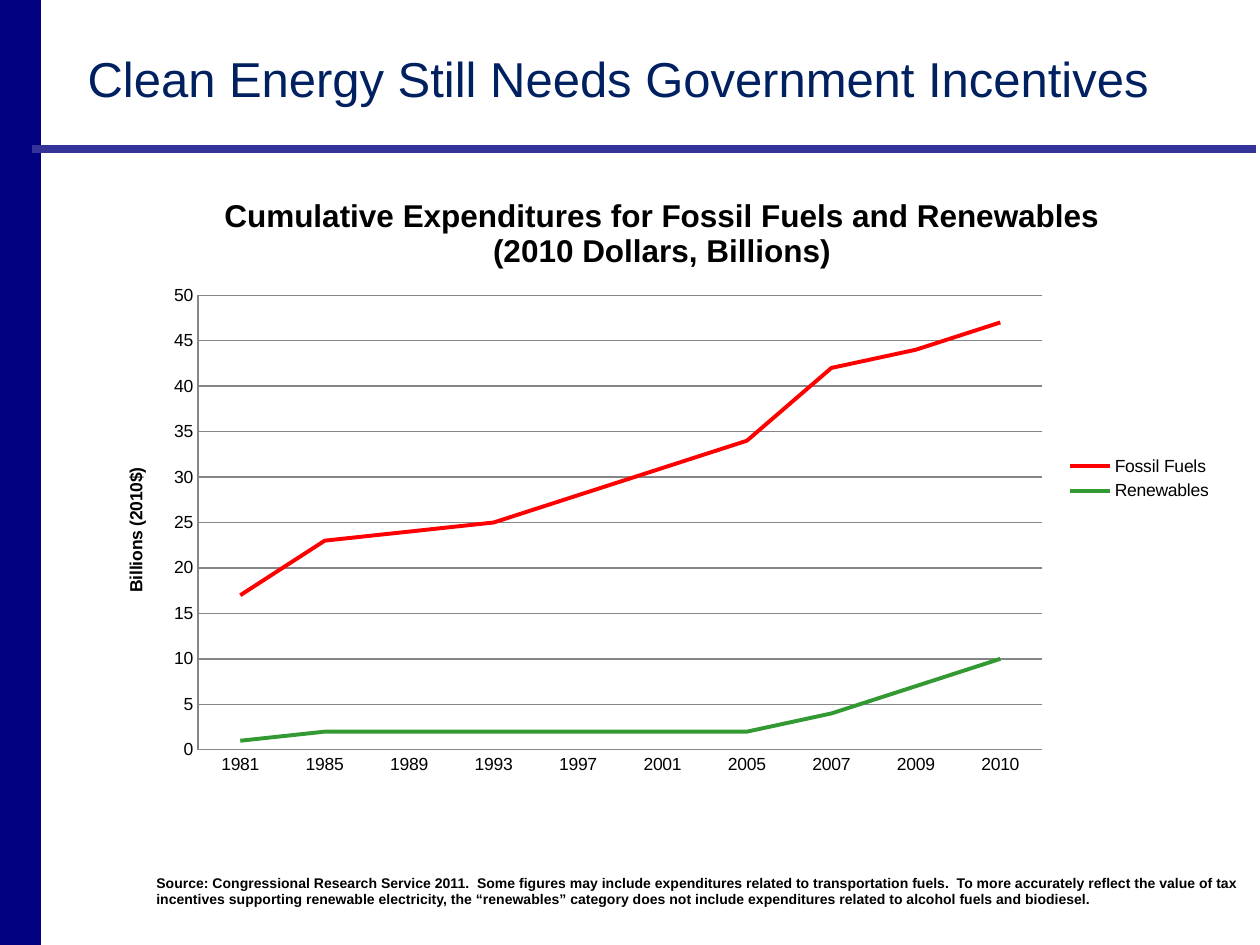
"""Builds a slide with a line chart of fossil fuel and renewable energy expenditures."""
from dataclasses import dataclass

from lxml import etree
from pptx import Presentation
from pptx import util as u
from pptx.chart.data import CategoryChartData
from pptx.dml.color import RGBColor
from pptx.enum import chart as ch
from pptx.enum import shapes, text
from pptx.oxml import parse_xml
from pptx.oxml.ns import nsdecls, qn

PX = u.Inches(1) / 126
NAVY = RGBColor(0x00, 0x00, 0x80)
INDIGO = RGBColor(0x33, 0x33, 0x99)
TITLE_BLUE = RGBColor(0x00, 0x20, 0x60)
BLACK = RGBColor(0x00, 0x00, 0x00)
GREY = RGBColor(0x86, 0x86, 0x86)
RED = RGBColor(0xFF, 0x00, 0x00)
GREEN = RGBColor(0x33, 0x99, 0x33)

TITLE = "Clean Energy Still Needs Government Incentives"
CHART_TITLE = "Cumulative Expenditures for Fossil Fuels and Renewables (2010 Dollars, Billions)"
SOURCE = (
    "Source: Congressional Research Service 2011.  Some figures may include expenditures "
    "related to transportation fuels.  To more accurately reflect the value of tax "
    "incentives supporting renewable electricity, the “renewables” category does not "
    "include expenditures related to alcohol fuels and biodiesel."
)
YEARS = ["1981", "1985", "1989", "1993", "1997", "2001", "2005", "2007", "2009", "2010"]


@dataclass(frozen=True)
class Box:
    left: int
    top: int
    width: int
    height: int

    def emu(self) -> tuple[int, ...]:
        return tuple(px(n) for n in (self.left, self.top, self.width, self.height))


@dataclass(frozen=True)
class Series:
    name: str
    values: tuple[int, ...]
    color: RGBColor


CHART_BOX = Box(99, 170, 1126, 617)
PLOT_BOX = Box(198, 295, 845, 455)
SERIES = (
    Series("Fossil Fuels", (17, 23, 24, 25, 28, 31, 34, 42, 44, 47), RED),
    Series("Renewables", (1, 2, 2, 2, 2, 2, 2, 4, 7, 10), GREEN),
)


def px(n: int) -> int:
    return round(n * PX)


def style_font(font, size: float, color: RGBColor, bold: bool = False) -> None:
    font.name = "Arial"
    font.size = u.Pt(size)
    font.bold = bold
    font.color.rgb = color


def add_frame(slide) -> None:
    sp = slide.shapes.add_shape(shapes.MSO_SHAPE.RECTANGLE, *Box(0, 0, 41, 945).emu())
    sp.shadow.inherit = False
    sp.fill.solid()
    sp.fill.fore_color.rgb = NAVY
    sp.line.fill.background()
    rule = slide.shapes.add_connector(
        shapes.MSO_CONNECTOR.STRAIGHT, px(32), px(149), px(1256), px(149))
    rule.line.color.rgb = INDIGO
    rule.line.width = u.Pt(4.5)
    etree.SubElement(rule._element.spPr, qn("a:effectLst"))


def set_title(slide) -> None:
    sp = slide.shapes.title
    sp.left, sp.top, sp.width, sp.height = Box(75, 0, 1154, 114).emu()
    tf = sp.text_frame
    tf.text = TITLE
    tf.vertical_anchor = text.MSO_ANCHOR.BOTTOM
    p = tf.paragraphs[0]
    p.alignment = text.PP_ALIGN.LEFT
    style_font(p.font, 28, TITLE_BLUE)


def add_source(slide) -> None:
    tf = slide.shapes.add_textbox(*Box(144, 868, 1135, 47).emu()).text_frame
    tf.word_wrap = True
    tf.text = SOURCE
    style_font(tf.paragraphs[0].font, 8, BLACK, bold=True)


def set_heading(owner, words: str, size: float) -> None:
    tf = owner.text_frame
    tf.text = words
    style_font(tf.paragraphs[0].font, size, BLACK, bold=True)


def place_plot(chart, frame: Box, plot: Box) -> None:
    parts = {
        "x": (plot.left - frame.left) / frame.width,
        "y": (plot.top - frame.top) / frame.height,
        "w": plot.width / frame.width,
        "h": plot.height / frame.height,
    }
    sizes = "".join(f'<c:{k} val="{v:.3f}"/>' for k, v in parts.items())
    layout = parse_xml(
        f'<c:layout {nsdecls("c")}><c:manualLayout><c:layoutTarget val="inner"/>'
        f'<c:xMode val="edge"/><c:yMode val="edge"/>{sizes}</c:manualLayout></c:layout>')
    area = chart._chartSpace.chart.plotArea
    for old in area.findall(qn("c:layout")):
        area.remove(old)
    area.insert(0, layout)


def add_expenditure_chart(slide) -> None:
    data = CategoryChartData()
    data.categories = YEARS
    for s in SERIES:
        data.add_series(s.name, s.values)
    chart = slide.shapes.add_chart(ch.XL_CHART_TYPE.LINE, *CHART_BOX.emu(), data).chart
    style_font(chart.font, 10, BLACK)
    chart.has_title = True
    set_heading(chart.chart_title, CHART_TITLE, 18)
    chart.has_legend = True
    chart.legend.position = ch.XL_LEGEND_POSITION.RIGHT
    chart.legend.include_in_layout = False
    chart.plots[0].vary_by_categories = False
    for line, s in zip(chart.plots[0].series, SERIES):
        line.smooth = False
        line.marker.style = ch.XL_MARKER_STYLE.NONE
        line.format.line.color.rgb = s.color
        line.format.line.width = u.Pt(2.25)
    val = chart.value_axis
    val.minimum_scale, val.maximum_scale, val.major_unit = 0, 50, 5
    val.has_major_gridlines = True
    val.tick_labels.number_format = "0"
    val.tick_labels.number_format_is_linked = False
    set_heading(val.axis_title, "Billions (2010$)", 10)
    for axis in (val, chart.category_axis):
        axis.major_tick_mark = ch.XL_TICK_MARK.NONE
        axis.minor_tick_mark = ch.XL_TICK_MARK.NONE
    for owner in (val, val.major_gridlines, chart.category_axis):
        owner.format.line.color.rgb = GREY
        owner.format.line.width = u.Pt(0.75)
    place_plot(chart, CHART_BOX, PLOT_BOX)


def main() -> None:
    prs = Presentation()
    prs.slide_width, prs.slide_height = px(1260), px(945)
    slide = prs.slides.add_slide(prs.slide_layouts[5])
    add_frame(slide)
    set_title(slide)
    add_source(slide)
    add_expenditure_chart(slide)
    prs.save("out.pptx")


if __name__ == "__main__":
    main()
